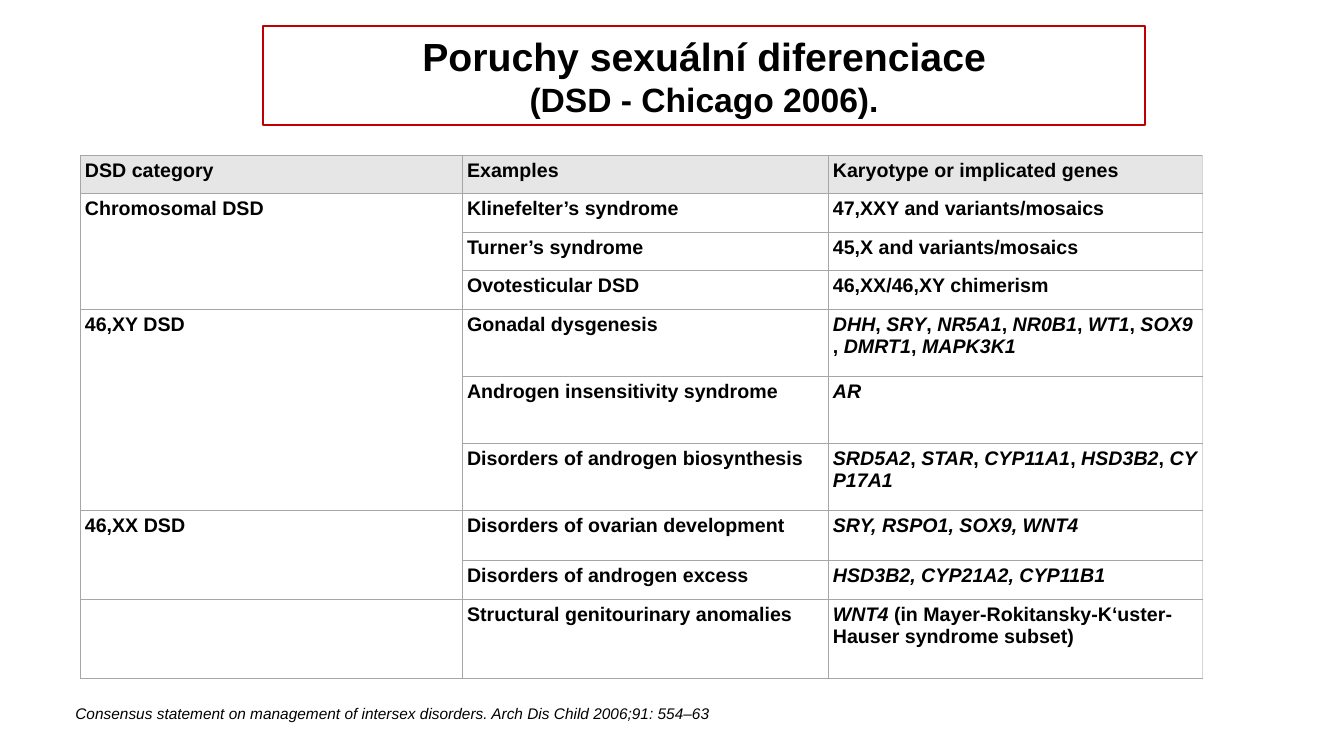
from lxml import etree
from pptx import Presentation
from pptx.dml.color import RGBColor
from pptx.enum.shapes import MSO_SHAPE as Shape
from pptx.enum.text import MSO_ANCHOR as Anchor, PP_ALIGN as Align
from pptx.oxml.ns import qn
from pptx.util import Cm, Pt

NBSP = chr(160)
BORDER, OUTER_BORDER = "A6A6A6", "D5D5D5"
COLUMN_WIDTHS = [9.63, 9.22, 9.42]


def genes(*names):
    """Gene list in which only the names are italic."""
    return f",{NBSP}".join(f"*{name}*" for name in names)


# Height in cm, then category, example and genes; *...* is italic
ROWS = [
    (0.97, "DSD category", "Examples", "Karyotype or implicated genes"),
    (0.97, "Chromosomal DSD", "Klinefelter’s syndrome", "47,XXY and variants/mosaics"),
    (0.97, "", "Turner’s syndrome", "45,X and variants/mosaics"),
    (0.97, "", "Ovotesticular DSD", "46,XX/46,XY chimerism"),
    (1.69, "46,XY DSD", "Gonadal dysgenesis",
     genes("DHH", "SRY", "NR5A1", "NR0B1", "WT1", "SOX9", "DMRT1", "MAPK3K1")),
    (1.69, "", "Androgen insensitivity syndrome", "*AR*"),
    (1.69, "", "Disorders of androgen biosynthesis",
     genes("SRD5A2", "STAR", "CYP11A1", "HSD3B2", "CYP17A1")),
    (1.27, "46,XX DSD", "Disorders of ovarian development", "*SRY, RSPO1, SOX9, WNT4*"),
    (0.97, "", "Disorders of androgen excess", "*HSD3B2, CYP21A2, CYP11B1*"),
    (2.0, "", "Structural genitourinary anomalies",
     f"*WNT4*{NBSP}(in Mayer-Rokitansky-K‘uster-Hauser syndrome{NBSP}subset)"),
]
CATEGORY_SPANS = [(1, 3), (4, 6), (7, 8)]


def rgb(value):
    return RGBColor.from_string(value)


def set_font(paragraph, size, bold=False, italic=None):
    font = paragraph.font
    font.name, font.size, font.bold, font.italic = "Arial", Pt(size), bold, italic
    font.color.rgb = rgb("000000")


def add_borders(cell, right):
    properties = cell._tc.get_or_add_tcPr()
    sides = [("lnL", BORDER), ("lnR", right), ("lnT", BORDER), ("lnB", BORDER)]
    for position, (side, color) in enumerate(sides):
        line = etree.Element(qn(f"a:{side}"), w=str(Pt(0.75)))
        fill = etree.SubElement(line, qn("a:solidFill"))
        etree.SubElement(fill, qn("a:srgbClr"), val=color)
        properties.insert(position, line)


def add_title(slide, left, top, width, height):
    title = slide.shapes.add_shape(Shape.RECTANGLE, Cm(left), Cm(top), Cm(width), Cm(height))
    title.shadow.inherit = False
    title.fill.background()
    title.line.color.rgb = rgb("C00000")
    title.line.width = Pt(1.5)
    frame = title.text_frame
    frame.word_wrap = True
    frame.vertical_anchor = Anchor.MIDDLE
    frame.text = "Poruchy sexuální diferenciace\n(DSD - Chicago 2006)."
    for paragraph, size in zip(frame.paragraphs, (28, 24)):
        paragraph.alignment = Align.CENTER
        set_font(paragraph, size, bold=True)


def fill_cell(cell, text, background, right_border):
    cell.margin_left = cell.margin_right = cell.margin_top = cell.margin_bottom = Cm(0.11)
    cell.fill.solid()
    cell.fill.fore_color.rgb = rgb(background)
    add_borders(cell, right_border)
    paragraph = cell.text_frame.paragraphs[0]
    set_font(paragraph, 14, bold=True)
    for index, part in enumerate(text.split("*")):
        if part:
            run = paragraph.add_run()
            run.text = part
            run.font.italic = index % 2 == 1


def add_dsd_table(slide, left, top):
    width, height = sum(COLUMN_WIDTHS), sum(row[0] for row in ROWS)
    table = slide.shapes.add_table(len(ROWS), len(COLUMN_WIDTHS), Cm(left), Cm(top),
                                   Cm(width), Cm(height)).table
    table.first_row = table.horz_banding = False
    for column, column_width in zip(table.columns, COLUMN_WIDTHS):
        column.width = Cm(column_width)
    for r, (row_height, *texts) in enumerate(ROWS):
        table.rows[r].height = Cm(row_height)
        for c, text in enumerate(texts):
            fill_cell(table.cell(r, c), text, "FFFFFF" if r else "E6E6E6",
                      OUTER_BORDER if c == len(texts) - 1 else BORDER)
    for first, last in CATEGORY_SPANS:
        table.cell(first, 0).merge(table.cell(last, 0))


def add_citation(slide, left, top, width, height):
    citation = slide.shapes.add_textbox(Cm(left), Cm(top), Cm(width), Cm(height))
    frame = citation.text_frame
    frame.word_wrap = True
    frame.text = ("Consensus statement on management of intersex disorders. "
                  "Arch Dis Child 2006;91: 554–63")
    set_font(frame.paragraphs[0], 11, italic=True)


def main():
    deck = Presentation()
    deck.slide_width, deck.slide_height = Cm(33.87), Cm(19.05)
    slide = deck.slides.add_slide(deck.slide_layouts[6])
    add_title(slide, 6.63, 0.66, 22.23, 2.49)
    add_dsd_table(slide, 2.03, 3.91)
    add_citation(slide, 1.65, 17.63, 17.63, 0.74)
    deck.save("out.pptx")


if __name__ == "__main__":
    main()
